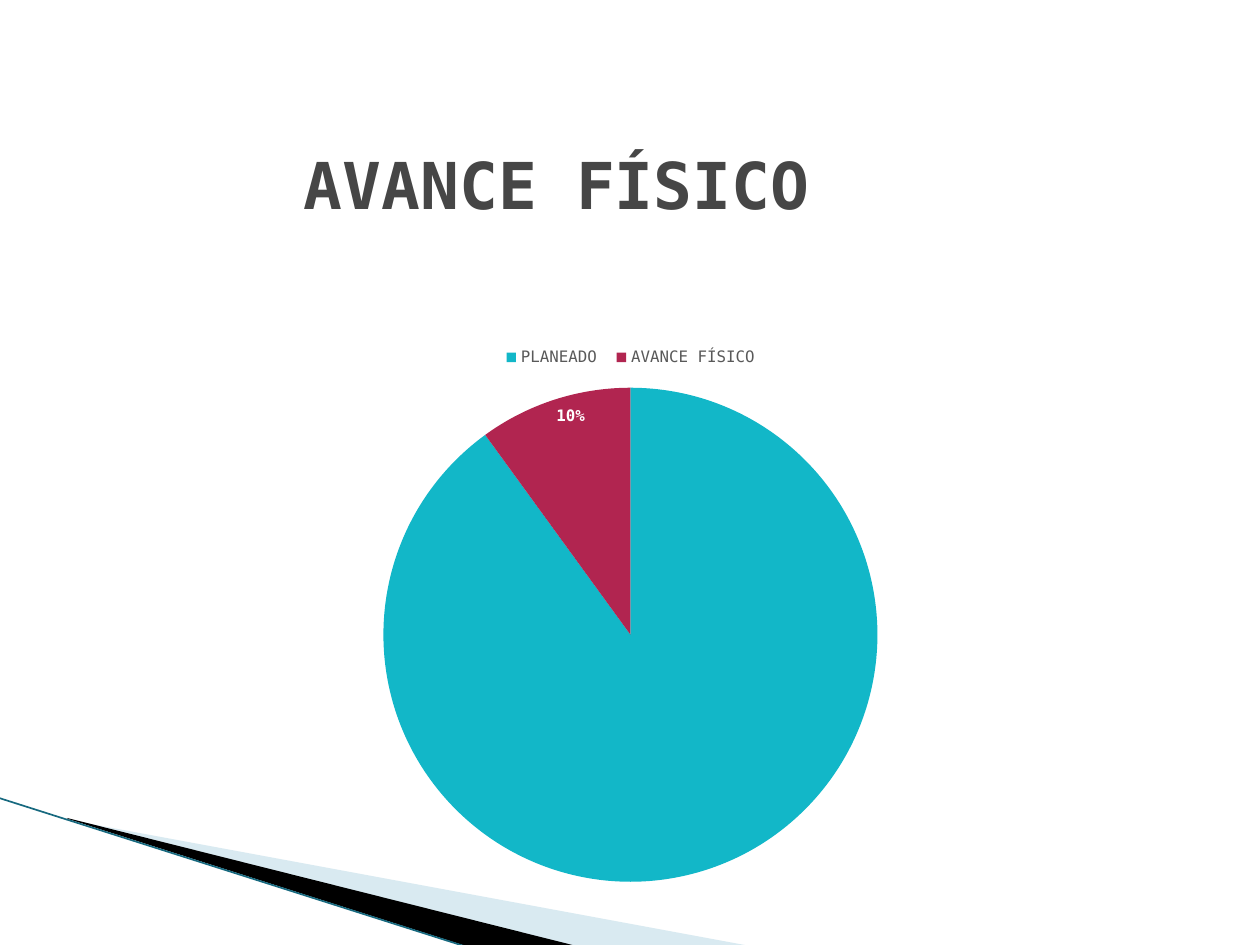
from dataclasses import dataclass

from lxml.etree import SubElement
from pptx import Presentation
from pptx.chart.data import CategoryChartData
from pptx.dml.color import RGBColor
from pptx.enum.chart import XL_CHART_TYPE as ChartType
from pptx.enum.chart import XL_LABEL_POSITION as LabelPos
from pptx.enum.chart import XL_LEGEND_POSITION as LegendPos
from pptx.enum.shapes import MSO_CONNECTOR as Connector
from pptx.enum.text import MSO_ANCHOR as Anchor
from pptx.enum.text import MSO_AUTO_SIZE as AutoSize
from pptx.enum.text import PP_ALIGN as Align
from pptx.oxml import parse_xml
from pptx.oxml.ns import nsdecls, qn
from pptx.util import Pt

PX = 914400 / 126


@dataclass(frozen=True)
class Theme:
    font: str = "DejaVu Sans Mono"
    title: str = "464646"
    legend: str = "595959"
    label: str = "FFFFFF"
    planned: str = "12B7C8"
    progress: str = "B12550"
    pale: str = "A0CBDC"
    dark: str = "000000"
    edge: str = "17697F"
    title_size: float = 36.9
    chart_size: float = 10
    small_size: float = 9
    edge_width: float = 0.95


THEME = Theme()


def px(*values):
    return [round(v * PX) for v in values]


def rgb(color):
    return RGBColor.from_string(color)


def set_font(font, size, color, bold=False):
    font.name = THEME.font
    font.size = Pt(size)
    font.color.rgb = rgb(color)
    font.bold = bold


def add_wedge(slide, left, top, points, color, alpha=None):
    """Draw a filled outline; points are relative to left, top; alpha in percent."""
    start, *rest = [(left + x, top + y) for x, y in points]
    builder = slide.shapes.build_freeform(*start, scale=PX)
    builder.add_line_segments(rest, close=True)
    sp = builder.convert_to_shape()
    sp.shadow.inherit = False
    sp.fill.solid()
    sp.fill.fore_color.rgb = rgb(color)
    sp.line.fill.background()
    if alpha is not None:
        clr = sp.fill._xPr.find(f".//{qn('a:srgbClr')}")
        SubElement(clr, qn("a:alpha"), val=str(alpha * 1000))


def add_corner(slide, left, top):
    add_wedge(slide, left, top, [(69, 22), (750, 148), (575, 148), (69, 21)],
              THEME.pale, alpha=40)
    add_wedge(slide, left, top, [(67, 20), (576, 148), (469, 149), (68, 21)],
              THEME.dark)
    edge = slide.shapes.add_connector(
        Connector.STRAIGHT, *px(left - 1, top, left + 467, top + 149))
    edge.line.color.rgb = rgb(THEME.edge)
    edge.line.width = Pt(THEME.edge_width)
    SubElement(edge._element.spPr, qn("a:effectLst"))


def set_plot_layout(chart, x, y, w, h):
    """Fix the inner plot area, in fractions of the chart box."""
    plot_area = chart._chartSpace.chart.plotArea
    for old in plot_area.findall(qn("c:layout")):
        plot_area.remove(old)
    sizes = "".join(f'<c:{tag} val="{val}"/>'
                    for tag, val in zip("xywh", (x, y, w, h)))
    plot_area.insert(0, parse_xml(
        f'<c:layout {nsdecls("c")}><c:manualLayout>'
        '<c:layoutTarget val="inner"/>'
        '<c:xMode val="edge"/><c:yMode val="edge"/>'
        f'{sizes}</c:manualLayout></c:layout>'))


def add_progress_pie(slide, left, top, width, height):
    data = CategoryChartData()
    data.categories = ["PLANEADO ", "AVANCE FÍSICO"]
    data.add_series("Series 1", [90, 10])
    chart = slide.shapes.add_chart(
        ChartType.PIE, *px(left, top, width, height), data).chart
    set_font(chart.font, THEME.chart_size, THEME.dark)
    chart.has_title = False
    chart.has_legend = True
    chart.legend.position = LegendPos.TOP
    chart.legend.include_in_layout = False
    set_font(chart.legend.font, THEME.small_size, THEME.legend)

    plot = chart.plots[0]
    plot.vary_by_categories = True
    series = plot.series[0]
    for i, color in enumerate((THEME.planned, THEME.progress)):
        fill = series.points[i].format.fill
        fill.solid()
        fill.fore_color.rgb = rgb(color)

    labels = series.data_labels
    labels.show_value = False
    labels.show_percentage = True
    labels.number_format = "0%"
    labels.number_format_is_linked = False
    labels.position = LabelPos.INSIDE_END
    set_font(labels.font, THEME.small_size, THEME.label, bold=True)
    # Only the progress slice carries a label.
    labels._element.insert(0, parse_xml(
        f'<c:dLbl {nsdecls("c")}><c:idx val="0"/><c:delete val="1"/></c:dLbl>'))
    set_plot_layout(chart, 0.22, 0.095, 0.56, 0.873)


def set_title(slide, text, left, top, width, height):
    title = slide.shapes.title
    title.left, title.top, title.width, title.height = px(left, top, width, height)
    tf = title.text_frame
    tf.text = text
    tf.word_wrap = True
    tf.auto_size = AutoSize.NONE
    tf.vertical_anchor = Anchor.MIDDLE
    p = tf.paragraphs[0]
    p.alignment = Align.CENTER
    set_font(p.font, THEME.title_size, THEME.title, bold=True)


def main():
    prs = Presentation()
    prs.slide_width, prs.slide_height = px(1260, 945)
    slide = prs.slides.add_slide(prs.slide_layouts[5])
    add_corner(slide, 0, 798)
    add_progress_pie(slide, 184, 334, 893, 566)
    set_title(slide, "AVANCE FÍSICO", 120, 135, 874, 98)
    prs.save("out.pptx")


if __name__ == "__main__":
    main()
